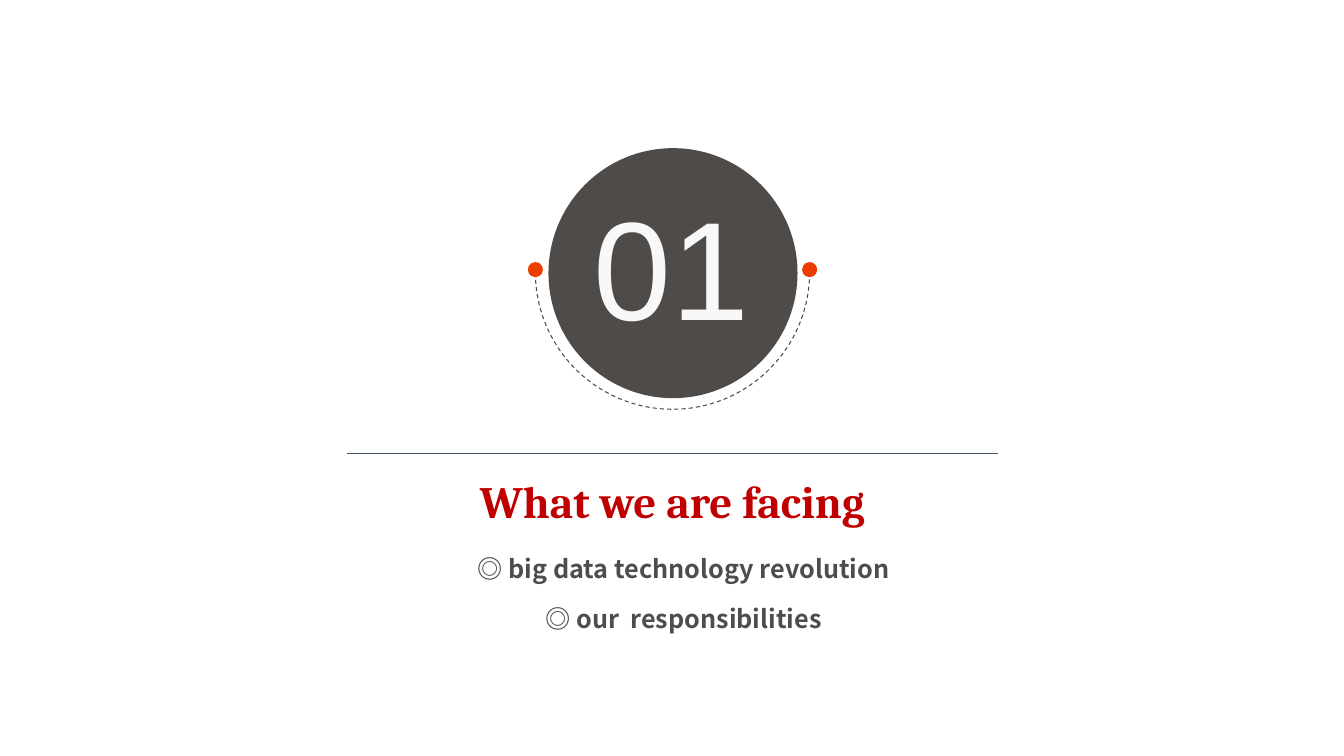
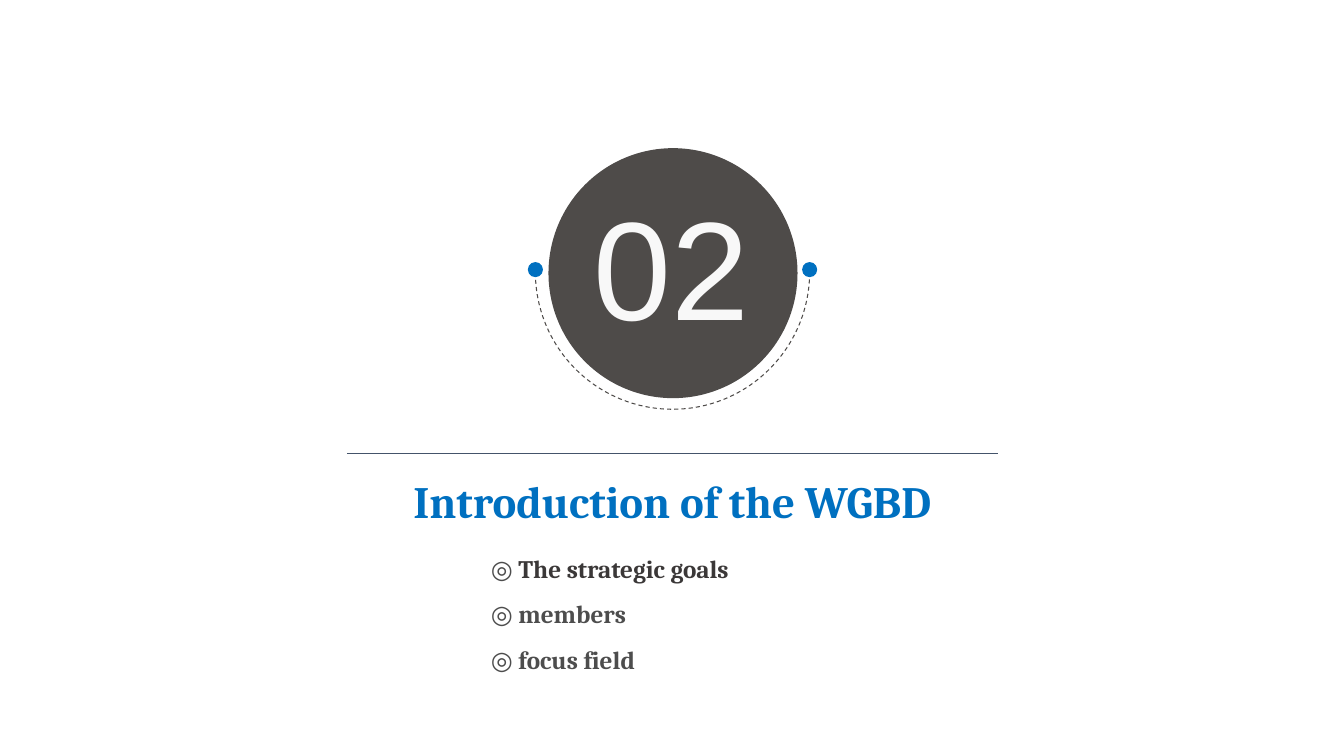
from dataclasses import dataclass

import pptx
import pptx.dml.color
import pptx.enum.dml
import pptx.enum.shapes
import pptx.enum.text
import pptx.oxml
import pptx.oxml.ns
import pptx.presentation
import pptx.slide
import pptx.text.text
import pptx.util

Inches = pptx.util.Inches
Pt = pptx.util.Pt
RGBColor = pptx.dml.color.RGBColor
MSO_SHAPE = pptx.enum.shapes.MSO_SHAPE
MSO_AUTO_SIZE = pptx.enum.text.MSO_AUTO_SIZE
PP_ALIGN = pptx.enum.text.PP_ALIGN

CHARCOAL = RGBColor(0x4E, 0x4B, 0x49)
SLATE = RGBColor(0x44, 0x54, 0x6A)
OFF_WHITE = RGBColor(0xF8, 0xF8, 0xF8)
GREY = RGBColor(0x4D, 0x4D, 0x4D)
DARK_GREY = RGBColor(0x3B, 0x38, 0x38)
ORANGE = RGBColor(0xEB, 0x3D, 0x00)
RED = RGBColor(0xC0, 0x00, 0x00)
BLUE = RGBColor(0x00, 0x70, 0xC0)

CENTER_X = 6.67
ARC_Y = 2.7
ARC_RADIUS = 1.36
DOT_SIZE = 0.15
DOT_Y = 2.6


@dataclass(frozen=True)
class Item:
    text: str
    color: RGBColor = GREY


@dataclass(frozen=True)
class Section:
    number: str
    title: str
    title_width: float
    title_color: RGBColor
    dot_color: RGBColor
    items: tuple[Item, ...]
    items_left: float
    items_height: float
    items_font: str
    items_align: PP_ALIGN
    items_gap: float


SECTIONS = (
    Section("01", "What we are facing", 4.11, RED, ORANGE,
            (Item("big data technology revolution"), Item("our  responsibilities")),
            3.63, 1.52, "Noto Sans CJK SC", PP_ALIGN.CENTER, 3.6),
    Section("02", "Introduction of the WGBD", 5.52, BLUE, BLUE,
            (Item("The strategic goals", DARK_GREY), Item("members"), Item("focus field")),
            4.77, 1.92, "Cambria", PP_ALIGN.LEFT, 0),
)


def style_run(r: pptx.text.text._Run, font: str, size: float, color: RGBColor, bold: bool) -> None:
    r.font.name = font
    r.font.size = Pt(size)
    r.font.color.rgb = color
    r.font.bold = bold


def add_disc(s: pptx.slide.Slide, left: float, top: float, width: float, height: float,
             color: RGBColor) -> None:
    sp = s.shapes.add_shape(MSO_SHAPE.OVAL, Inches(left), Inches(top), Inches(width), Inches(height))
    sp.shadow.inherit = False
    sp.fill.solid()
    sp.fill.fore_color.rgb = color
    sp.line.fill.background()


def add_dashed_arc(s: pptx.slide.Slide) -> None:
    size = Inches(2 * ARC_RADIUS)
    sp = s.shapes.add_shape(MSO_SHAPE.ARC, Inches(CENTER_X - ARC_RADIUS),
                            Inches(ARC_Y - ARC_RADIUS), size, size)
    sp.adjustments[0] = 0
    sp.adjustments[1] = 108
    sp.shadow.inherit = False
    sp.fill.background()
    sp.line.color.rgb = CHARCOAL
    sp.line.width = Pt(0)
    sp.line.dash_style = pptx.enum.dml.MSO_LINE.DASH


def add_badge(s: pptx.slide.Slide, number: str, dot_color: RGBColor) -> None:
    add_disc(s, 5.44, 1.47, 2.47, 2.48, CHARCOAL)
    add_dashed_arc(s)
    for side in (1, -1):
        add_disc(s, CENTER_X + side * ARC_RADIUS - DOT_SIZE / 2, DOT_Y, DOT_SIZE, DOT_SIZE, dot_color)
    tf = s.shapes.add_textbox(Inches(5.79), Inches(1.74), Inches(1.76), Inches(1.78)).text_frame
    tf.word_wrap = False
    tf.auto_size = MSO_AUTO_SIZE.SHAPE_TO_FIT_TEXT
    tf.text = number
    style_run(tf.paragraphs[0].runs[0], "Arial", 100, OFF_WHITE, False)


def add_rule(s: pptx.slide.Slide) -> None:
    line = s.shapes.add_connector(pptx.enum.shapes.MSO_CONNECTOR.STRAIGHT,
                                  Inches(3.44), Inches(4.5), Inches(9.9), Inches(4.5))
    line.line.color.rgb = SLATE
    line.line.width = Pt(0.75)
    line._element.spPr.append(pptx.oxml.parse_xml(f"<a:effectLst {pptx.oxml.ns.nsdecls('a')}/>"))


def set_title(s: pptx.slide.Slide, text: str, width: float, color: RGBColor) -> None:
    sp = s.shapes.title
    sp.left, sp.top = Inches(CENTER_X - width / 2), Inches(4.65)
    sp.width, sp.height = Inches(width), Inches(0.64)
    tf = sp.text_frame
    tf.text = text
    tf.word_wrap = False
    tf.auto_size = MSO_AUTO_SIZE.NONE
    tf.vertical_anchor = pptx.enum.text.MSO_ANCHOR.TOP
    p = tf.paragraphs[0]
    p.alignment = PP_ALIGN.CENTER
    style_run(p.runs[0], "Cambria", 32, color, True)


def add_items(s: pptx.slide.Slide, section: Section) -> None:
    tf = s.shapes.add_textbox(Inches(section.items_left), Inches(5.29),
                              Inches(6.3), Inches(section.items_height)).text_frame
    tf.word_wrap = True
    for i, item in enumerate(section.items):
        p = tf.add_paragraph() if i else tf.paragraphs[0]
        p.alignment = section.items_align
        p.line_spacing = 1.5
        p.space_before = Pt(section.items_gap if i else 0)
        for text, color in (("◎ ", GREY), (item.text, item.color)):
            r = p.add_run()
            r.text = text
            style_run(r, section.items_font, 18, color, True)


def add_section(prs: pptx.presentation.Presentation, section: Section) -> None:
    s = prs.slides.add_slide(prs.slide_layouts.get_by_name("Title Only"))
    add_badge(s, section.number, section.dot_color)
    add_rule(s)
    set_title(s, section.title, section.title_width, section.title_color)
    add_items(s, section)


def main() -> None:
    prs = pptx.Presentation()
    prs.slide_width = Inches(13.33)
    prs.slide_height = Inches(7.5)
    for section in SECTIONS:
        add_section(prs, section)
    prs.save("out.pptx")


if __name__ == "__main__":
    main()
